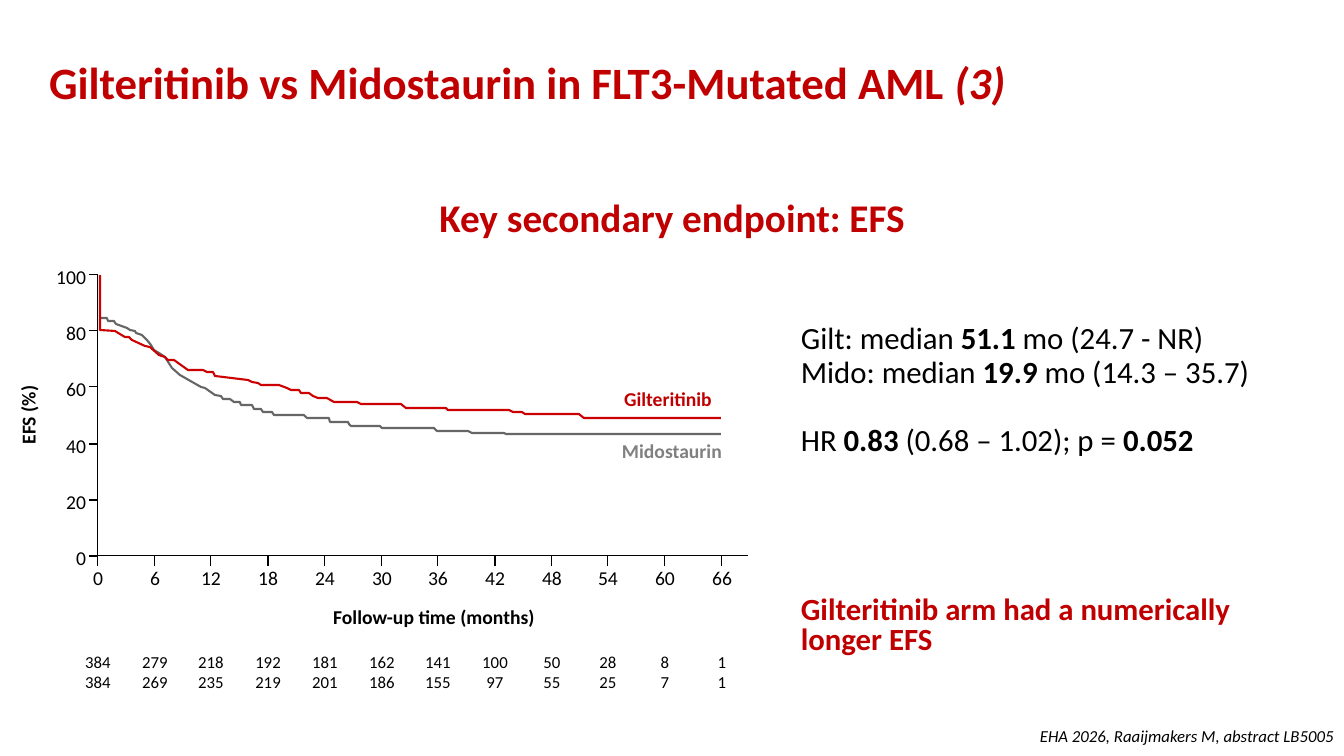
from dataclasses import dataclass

from pptx import Presentation
from pptx import util as u
from pptx.dml.color import RGBColor
from pptx.enum import shapes, text
from pptx.oxml.ns import qn
from lxml import etree

PX = 914400 / 100.8
LEFT, CENTER, RIGHT = text.PP_ALIGN.LEFT, text.PP_ALIGN.CENTER, text.PP_ALIGN.RIGHT


def px(length):
    return u.Emu(round(length * PX))


@dataclass(frozen=True)
class Theme:
    font: str = "Calibri"
    black: str = "000000"
    red: str = "C00000"
    grey: str = "808080"
    red_curve: str = "CC0000"
    grey_curve: str = "666666"
    title: int = 32
    heading: int = 28
    body: int = 22
    label: int = 14
    small: int = 12
    axis_width: float = 0.75
    curve_width: float = 1.5


class SlideBuilder:
    def __init__(self, slide, theme):
        self.slide = slide
        self.theme = theme

    def style(self, run, size, color, bold=False, italic=False):
        font = run.font
        font.name, font.size = self.theme.font, u.Pt(size)
        font.bold, font.italic = bold, italic
        font.color.rgb = RGBColor.from_string(color)

    def title(self, plain, emphasis, left, top, width, height, indent):
        shape = self.slide.shapes.title
        shape.left, shape.top = px(left), px(top)
        shape.width, shape.height = px(width), px(height)
        frame = shape.text_frame
        frame.auto_size = text.MSO_AUTO_SIZE.NONE
        frame.vertical_anchor = text.MSO_ANCHOR.MIDDLE
        frame.margin_left = px(indent)
        paragraph = frame.paragraphs[0]
        paragraph.alignment, paragraph.line_spacing = LEFT, 0.9
        for words, italic in ((plain, False), (emphasis, True)):
            run = paragraph.add_run()
            run.text = words
            self.style(run, self.theme.title, self.theme.red, True, italic)

    def frame(self, left, top, width, height):
        box = self.slide.shapes.add_textbox(px(left), px(top), px(width), px(height))
        box.text_frame.word_wrap = True
        return box

    def label(self, words, left, top, width, height, size=None, color=None,
              align=CENTER, bold=False, italic=False, rotation=0):
        box = self.frame(left, top, width, height)
        box.rotation = rotation
        box.text_frame.text = words
        for paragraph in box.text_frame.paragraphs:
            paragraph.alignment = align
            for run in paragraph.runs:
                self.style(run, size or self.theme.label,
                           color or self.theme.black, bold, italic)

    def results(self, lines, left, top, width, height):
        """Write (words, color, space before) lines; every second part between bars is bold."""
        frame = self.frame(left, top, width, height).text_frame
        for index, (words, color, space) in enumerate(lines):
            paragraph = frame.add_paragraph() if index else frame.paragraphs[0]
            paragraph.line_spacing = 0.8 if index else 1.0
            paragraph.space_before = u.Pt(space)
            for part, piece in enumerate(words.split("|")):
                if piece == "\v":
                    paragraph.add_line_break()
                elif piece:
                    run = paragraph.add_run()
                    run.text = piece
                    self.style(run, self.theme.body, color, bold=part % 2 == 1)

    def outline(self, shape, color, width):
        shape.line.color.rgb = RGBColor.from_string(color)
        shape.line.width = u.Pt(width)

    def tick(self, x1, y1, x2, y2):
        line = self.slide.shapes.add_connector(
            shapes.MSO_CONNECTOR.STRAIGHT, px(x1), px(y1), px(x2), px(y2))
        self.outline(line, self.theme.black, self.theme.axis_width)
        properties = line._element.find(qn("p:spPr"))
        etree.SubElement(properties, qn("a:effectLst"))

    def polyline(self, points, color, width):
        builder = self.slide.shapes.build_freeform(*points[0], scale=PX)
        builder.add_line_segments(points[1:], close=False)
        shape = builder.convert_to_shape()
        shape.shadow.inherit = False
        shape.fill.background()
        self.outline(shape, color, width)


MIDOSTAURIN = [
    (100, 318), (107, 318), (108, 321), (114, 321), (116, 324), (127, 328),
    (130, 330), (135, 331), (136, 333), (142, 335), (147, 340), (151, 345),
    (154, 350), (159, 353), (165, 357), (172, 368), (180, 375), (201, 387),
    (205, 388), (215, 395), (221, 396), (223, 399), (230, 399), (234, 402),
    (240, 402), (241, 405), (252, 405), (254, 409), (261, 409), (263, 412),
    (272, 412), (274, 415), (304, 415), (307, 418), (329, 418), (330, 422),
    (348, 422), (349, 424), (351, 426), (380, 426), (382, 428), (434, 428),
    (437, 431), (468, 431), (472, 433), (504, 433), (506, 434), (721, 434)]
GILTERITINIB = [
    (100, 275), (100, 330), (115, 331), (125, 337), (129, 337), (132, 340),
    (145, 346), (150, 347), (159, 355), (165, 357), (168, 360), (174, 360),
    (188, 370), (203, 370), (207, 372), (213, 372), (215, 376), (248, 380),
    (252, 382), (258, 383), (261, 385), (279, 385), (287, 388), (291, 390),
    (299, 390), (301, 393), (309, 393), (313, 396), (318, 398), (327, 398),
    (334, 402), (357, 402), (361, 404), (401, 404), (406, 408), (446, 408),
    (448, 410), (509, 410), (513, 412), (522, 412), (525, 414), (579, 414),
    (584, 418), (721, 418)]
AT_RISK = [(384, 384), (279, 269), (218, 235), (192, 219), (181, 201), (162, 186),
           (141, 155), (100, 97), (50, 55), (28, 25), (8, 7), (1, 1)]
AXIS_X, AXIS_Y, AXIS_TOP, AXIS_END = 98, 556, 274, 748
MONTH_STEP, PERCENT_STEP = 56.7, 56.2
LABEL_WIDTH, LABEL_HEIGHT = 56, 34


def draw_survival_plot(builder):
    theme = builder.theme
    builder.polyline([(AXIS_END, AXIS_Y), (AXIS_X, AXIS_Y), (AXIS_X, AXIS_TOP)],
                     theme.black, theme.axis_width)
    for index in range(6):
        y = round(AXIS_Y - index * PERCENT_STEP)
        builder.tick(AXIS_X, y, AXIS_X - 9, y)
        builder.label(str(index * 20), 40, y - 15, LABEL_WIDTH, LABEL_HEIGHT, align=RIGHT)
    for index, counts in enumerate(AT_RISK):
        x = round(AXIS_X + index * MONTH_STEP)
        left = x - LABEL_WIDTH // 2
        builder.tick(x, AXIS_Y + 10, x, AXIS_Y)
        builder.label(str(index * 6), left, 561, LABEL_WIDTH, LABEL_HEIGHT)
        builder.label("\n".join(map(str, counts)), left, 647, LABEL_WIDTH, 50,
                      size=theme.small)
    builder.polyline(MIDOSTAURIN, theme.grey_curve, theme.curve_width)
    builder.polyline(GILTERITINIB, theme.red_curve, theme.curve_width)
    builder.label("Gilteritinib", 603, 382, 130, LABEL_HEIGHT, color=theme.red, bold=True)
    builder.label("Midostaurin", 607, 434, 130, LABEL_HEIGHT, color=theme.grey, bold=True)
    builder.label("EFS (%)", -17, 398, 90, LABEL_HEIGHT, bold=True, rotation=270)
    builder.label("Follow-up time (months)", 314, 600, 240, LABEL_HEIGHT, bold=True)


def main():
    presentation = Presentation()
    presentation.slide_width, presentation.slide_height = px(1344), px(756)
    theme = Theme()
    slide = presentation.slides.add_slide(presentation.slide_layouts[5])
    builder = SlideBuilder(slide, theme)
    builder.title("Gilteritinib vs Midostaurin in FLT3-Mutated AML ", "(3)",
                  0, -1, 1028, 171, indent=49)
    builder.label("Key secondary endpoint: EFS", 417, 188, 510, 57,
                  size=theme.heading, color=theme.red, bold=True)
    draw_survival_plot(builder)
    builder.results([
        ("Gilt: median |51.1| mo (24.7 - NR)", theme.black, 0),
        ("Mido: median |19.9| mo (14.3 – 35.7)", theme.black, 3),
        ("HR |0.83| (0.68 – 1.02); p = |0.052", theme.black, 27),
        ("|Gilteritinib arm had a numerically|\v|longer EFS", theme.red, 100),
    ], 791, 314, 503, 370)
    builder.label("EHA 2026, Raaijmakers M, abstract LB5005", 1004, 721, 340, 30,
                  size=theme.small, align=RIGHT, italic=True)
    presentation.save("out.pptx")


if __name__ == "__main__":
    main()
